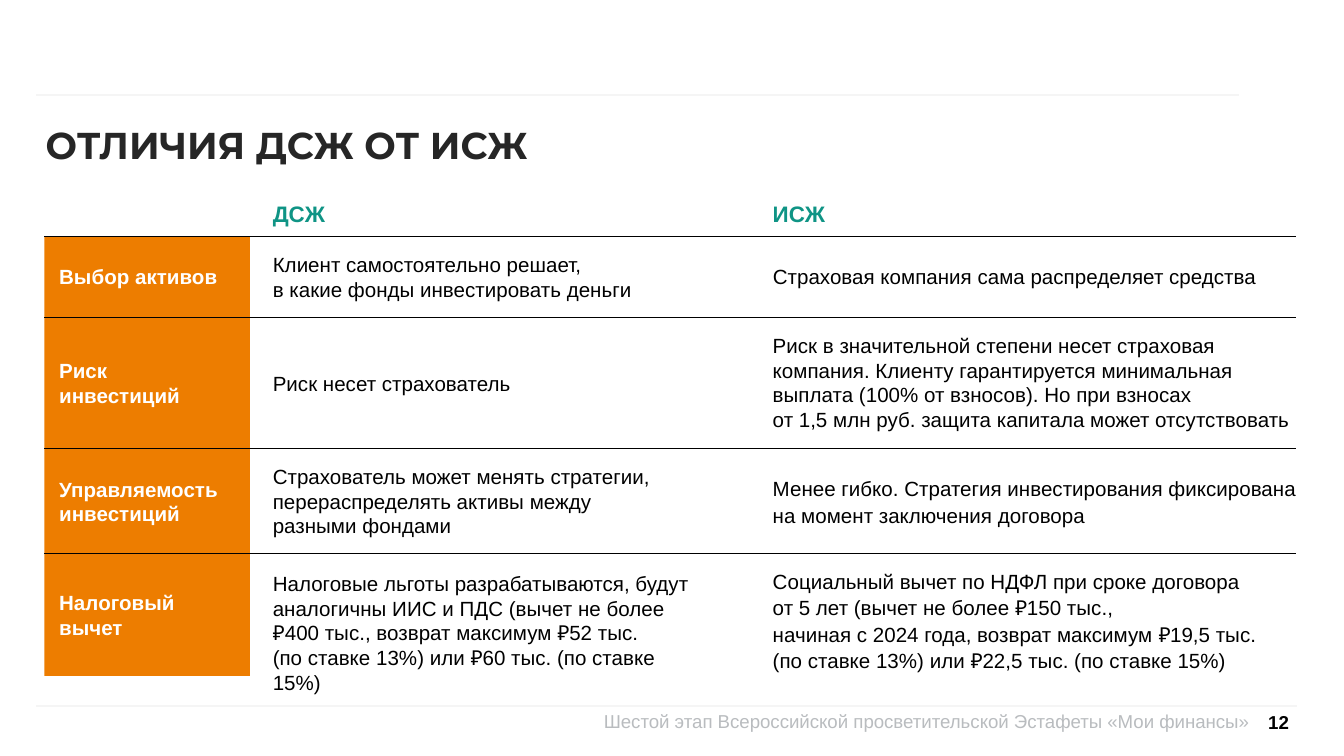
from collections import namedtuple
from copy import deepcopy
from itertools import pairwise

from lxml import etree
from pptx import Presentation
from pptx import util as u
from pptx.dml.color import RGBColor
from pptx.enum import shapes, text
from pptx.oxml import ns

COLORS = {
    "rule": "F5F5F5", "footer": "B9BCBF", "panel": "ED7D00", "title": "262626",
    "heading": "0F9485", "label": "FFFFFF", "body": "000000",
}
CELL = u.Inches(0.1)
LINE_HEIGHT = 1.86
Box = namedtuple("Box", "left top width height")
Entry = namedtuple("Entry", "value width lines spacing", defaults=(1.0,))
Row = namedtuple("Row", "label label_width label_lines first second")

PAGE = Box(0, 0, 100, 56.25)
HEADER = Box(2.7, 7.1, 89.5, 5)
TABLE = Box(3.3, 14.9, 93.1, 36.3)
FOOTER = Box(2.7, 52.5, 93.8, 3.7)

ROW_EDGES = (2.7, 8.7, 18.5, 26.3, 36.3)
PANEL_WIDTH, PANEL_HEIGHT = 15.3, 32.7
LABEL_COLUMN, FIRST_COLUMN, SECOND_COLUMN = 1.1, 17, 54.2

ROWS = (
    Row("Выбор активов", 15.2, 1,
        Entry("Клиент самостоятельно решает, \nв какие фонды инвестировать деньги", 29.4, 2),
        Entry("Страховая компания сама распределяет средства", 37.5, 1)),
    Row("Риск инвестиций", 10.9, 2,
        Entry("Риск несет страхователь", 28, 1),
        Entry("Риск в значительной степени несет страховая компания. Клиенту "
              "гарантируется минимальная выплата (100% от взносов). Но при взносах \n"
              "от 1,5 млн руб. защита капитала может отсутствовать", 39.4, 4)),
    Row("Управляемость инвестиций", 15.2, 2,
        Entry("Страхователь может менять стратегии, перераспределять активы "
              "между разными фондами", 29.4, 3),
        Entry("Менее гибко. Стратегия инвестирования фиксирована "
              "на момент заключения договора", 39.4, 2, 1.07)),
    Row("Налоговый вычет", 12.5, 2,
        Entry("Налоговые льготы разрабатываются, будут аналогичны ИИС и ПДС "
              "(вычет не более ₽400 тыс., возврат максимум ₽52 тыс. \n"
              "(по ставке 13%) или ₽60 тыс. (по ставке 15%)", 32.4, 4),
        Entry("Социальный вычет по НДФЛ при сроке договора \n"
              "от 5 лет (вычет не более ₽150 тыс., \n"
              "начиная с 2024 года, возврат максимум ₽19,5 тыс. \n"
              "(по ставке 13%) или ₽22,5 тыс. (по ставке 15%)", 39.4, 4, 1.07)),
)


def color(name):
    """Return a named colour."""
    return RGBColor.from_string(COLORS[name])


def measure(box):
    """Turn a box in grid cells into slide lengths."""
    return [round(length * CELL) for length in box]


def write(shape, value, size=11, fill="body", font="Arial", bold=False, spacing=1.0,
          align=text.PP_ALIGN.LEFT, anchor=text.MSO_ANCHOR.TOP,
          fit=text.MSO_AUTO_SIZE.SHAPE_TO_FIT_TEXT):
    """Put formatted text into a shape."""
    frame = shape.text_frame
    frame.margin_left = frame.margin_right = 0
    frame.margin_top = frame.margin_bottom = 0
    frame.word_wrap, frame.auto_size, frame.vertical_anchor = True, fit, anchor
    paragraph = frame.paragraphs[0]
    paragraph.text = value
    paragraph.alignment, paragraph.line_spacing = align, spacing
    for run in paragraph.runs:
        run.font.size, run.font.name, run.font.bold = u.Pt(size), font, bold
        run.font.color.rgb = color(fill)
    for line_break in paragraph._p.findall(ns.qn("a:br")):
        line_break.append(deepcopy(paragraph.runs[0].font._element))


def add_text(slide, box, value, **style):
    """Add a text box in the given box."""
    write(slide.shapes.add_textbox(*measure(box)), value, **style)


def add_rule(slide, left, top, width, fill, weight):
    """Draw a horizontal rule without a shadow."""
    start, level, length = measure((left, top, width))
    rule = slide.shapes.add_connector(
        shapes.MSO_CONNECTOR.STRAIGHT, start, level, start + length, level)
    rule.line.color.rgb = color(fill)
    rule.line.width = u.Pt(weight)
    etree.SubElement(rule._element.spPr, ns.qn("a:effectLst"))


def add_header(slide, box):
    """Place the top rule and the title."""
    add_rule(slide, box.left, box.top, box.width, "rule", 1)
    title = slide.shapes.title
    title.left, title.top, title.width, title.height = measure(
        (box.left + 0.7, box.top + 2.4, 66.8, 2.3))
    write(title, "ОТЛИЧИЯ ДСЖ ОТ ИСЖ", size=20, fill="title", font="Montserrat",
          bold=True, spacing=0.9, fit=text.MSO_AUTO_SIZE.NONE)


def add_footer(slide, box):
    """Place the bottom rule, the event name and the page number."""
    add_rule(slide, box.left, box.top, box.width, "rule", 1)
    add_text(slide, Box(box.left + 33.1, box.top + 0.3, 57.1, 3.5),
             "Шестой этап Всероссийской просветительской Эстафеты «Мои финансы»",
             size=10, fill="footer", align=text.PP_ALIGN.RIGHT,
             fit=text.MSO_AUTO_SIZE.NONE)
    add_text(slide, Box(box.left + 91.3, box.top - 0.2, 1.9, 2.8), "12", size=10,
             bold=True, align=text.PP_ALIGN.RIGHT, anchor=text.MSO_ANCHOR.MIDDLE,
             fit=text.MSO_AUTO_SIZE.NONE)


def add_row(slide, box, row, label_height):
    """Centre a label and two entries in one row."""
    height = row.label_lines * LINE_HEIGHT
    add_text(slide, Box(box.left + LABEL_COLUMN, box.top + (label_height - height) / 2,
                        row.label_width, height),
             row.label, fill="label", bold=True, align=text.PP_ALIGN.JUSTIFY,
             anchor=text.MSO_ANCHOR.MIDDLE)
    for column, entry in ((FIRST_COLUMN, row.first), (SECOND_COLUMN, row.second)):
        height = entry.lines * LINE_HEIGHT * entry.spacing
        add_text(slide, Box(box.left + column, box.top + (box.height - height) / 2,
                            entry.width, height),
                 entry.value, spacing=entry.spacing)


def add_comparison(slide, box):
    """Place the label panel, headings, rows and row rules."""
    panel = slide.shapes.add_shape(
        shapes.MSO_SHAPE.RECTANGLE,
        *measure((box.left, box.top + ROW_EDGES[0], PANEL_WIDTH, PANEL_HEIGHT)))
    panel.shadow.inherit = False
    panel.fill.solid()
    panel.fill.fore_color.rgb = color("panel")
    panel.line.fill.background()
    for column, heading in ((FIRST_COLUMN, "ДСЖ"), (SECOND_COLUMN, "ИСЖ")):
        add_text(slide, Box(box.left + column, box.top, 29.4, 2), heading,
                 size=12, fill="heading", bold=True)
    panel_bottom = ROW_EDGES[0] + PANEL_HEIGHT
    for row, (top, bottom) in zip(ROWS, pairwise(ROW_EDGES)):
        area = Box(box.left, box.top + top, box.width, bottom - top)
        add_row(slide, area, row, min(bottom, panel_bottom) - top)
        add_rule(slide, area.left, area.top, area.width, "body", 0.5)


def main():
    """Build and save the slide."""
    presentation = Presentation()
    presentation.slide_width, presentation.slide_height = measure(PAGE[2:])
    slide = presentation.slides.add_slide(presentation.slide_layouts[5])
    add_header(slide, HEADER)
    add_footer(slide, FOOTER)
    add_comparison(slide, TABLE)
    presentation.save("out.pptx")


if __name__ == "__main__":
    main()
